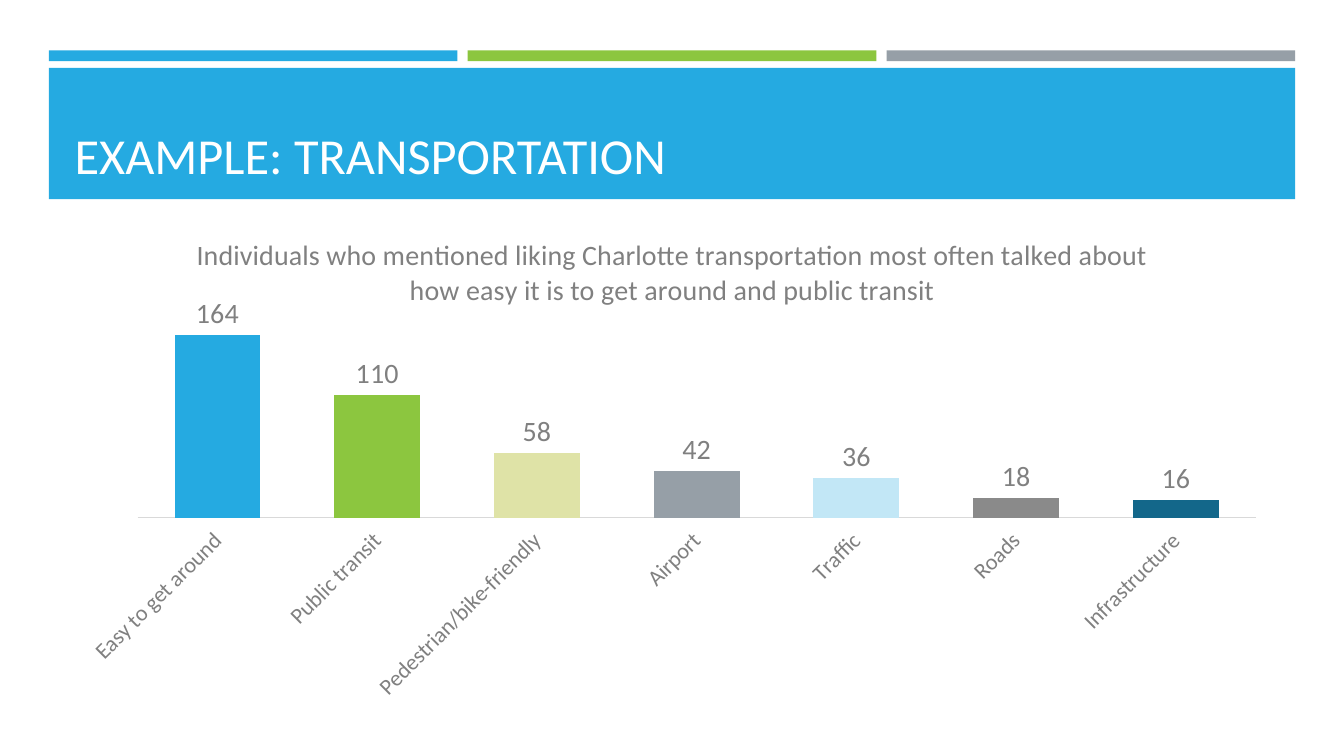
"""Build the transportation example slide: a title banner above a column chart."""
from lxml import etree
from pptx import Presentation
from pptx.chart.data import CategoryChartData
from pptx.dml.color import RGBColor
from pptx.enum.chart import XL_CHART_TYPE as ChartType, XL_LABEL_POSITION as LabelPosition
from pptx.enum.chart import XL_TICK_LABEL_POSITION as TickLabels, XL_TICK_MARK as TickMark
from pptx.enum.shapes import MSO_SHAPE as Shape
from pptx.enum.text import MSO_ANCHOR as Anchor
from pptx.oxml.ns import qn
from pptx.util import Cm, Pt

BLUE = RGBColor(0x25, 0xAA, 0xE1)
GREEN = RGBColor(0x8C, 0xC6, 0x3F)
STEEL = RGBColor(0x96, 0x9F, 0xA7)
CREAM = RGBColor(0xDF, 0xE3, 0xA7)
PALE_BLUE = RGBColor(0xC2, 0xE7, 0xF6)
GREY = RGBColor(0x8A, 0x8A, 0x8A)
TEAL = RGBColor(0x13, 0x67, 0x8A)
TEXT_GREY = RGBColor(0x80, 0x80, 0x80)
AXIS_GREY = RGBColor(0xD9, 0xD9, 0xD9)
WHITE = RGBColor(0xFF, 0xFF, 0xFF)
FONT = "Calibri"

TITLE = "EXAMPLE: TRANSPORTATION"
FINDING = ("Individuals who mentioned liking Charlotte transportation most often talked about "
           "how easy it is to get around and public transit")
MENTIONS = [
    ("Easy to get around", 164, BLUE),
    ("Public transit", 110, GREEN),
    ("Pedestrian/bike-friendly", 58, CREAM),
    ("Airport", 42, STEEL),
    ("Traffic", 36, PALE_BLUE),
    ("Roads", 18, GREY),
    ("Infrastructure", 16, TEAL),
]
STRIPES = [BLUE, GREEN, STEEL]
PLOT_AREA = {"x": 0.06, "y": 0.21, "w": 0.92, "h": 0.41}

LEFT, BANNER_WIDTH = 1.23, 31.41
STRIPE_GAP = 0.26
STRIPE_WIDTH = (BANNER_WIDTH - STRIPE_GAP * (len(STRIPES) - 1)) / len(STRIPES)
CONTENT_LEFT, CONTENT_WIDTH = 1.63, 30.63


def set_font(font, size, color):
    font.name, font.size, font.bold = FONT, Pt(size), False
    font.color.rgb = color


def add_text(slide, text, *, left, top, width, height, size, color, anchor):
    frame = slide.shapes.add_textbox(Cm(left), Cm(top), Cm(width), Cm(height)).text_frame
    frame.word_wrap = True
    frame.vertical_anchor = anchor
    run = frame.paragraphs[0].add_run()
    run.text = text
    set_font(run.font, size, color)


def add_band(slide, color, left, top, width, height):
    band = slide.shapes.add_shape(Shape.RECTANGLE, Cm(left), Cm(top), Cm(width), Cm(height))
    band.shadow.inherit = False
    band.fill.solid()
    band.fill.fore_color.rgb = color
    band.line.fill.background()


def place_plot(chart, area):
    plot_area = chart.plots[0]._element.getparent()
    for old in plot_area.findall(qn("c:layout")):
        plot_area.remove(old)
    layout = etree.Element(qn("c:layout"))
    manual = etree.SubElement(layout, qn("c:manualLayout"))
    settings = {"layoutTarget": "inner", "xMode": "edge", "yMode": "edge", **area}
    for tag, value in settings.items():
        etree.SubElement(manual, qn(f"c:{tag}")).set("val", str(value))
    plot_area.insert(0, layout)


def add_mentions_chart(slide):
    data = CategoryChartData()
    data.categories = [topic for topic, _, _ in MENTIONS]
    data.add_series("Series 1", [count for _, count, _ in MENTIONS])
    chart = slide.shapes.add_chart(ChartType.COLUMN_CLUSTERED, Cm(CONTENT_LEFT), Cm(5.41),
                                   Cm(CONTENT_WIDTH), Cm(12.32), data).chart
    set_font(chart.font, 10, TEXT_GREY)
    chart.has_legend = False

    finding = chart.chart_title.text_frame.paragraphs[0].add_run()
    finding.text = FINDING
    set_font(finding.font, 20, TEXT_GREY)
    chart.chart_title.include_in_layout = False

    topics = chart.category_axis
    topics.major_tick_mark = topics.minor_tick_mark = TickMark.NONE
    topics.tick_label_position = TickLabels.LOW
    topics.format.line.color.rgb = AXIS_GREY
    topics.format.line.width = Pt(0.75)
    set_font(topics.tick_labels.font, 16, TEXT_GREY)
    label_body = next(topics._element.iter(qn("a:bodyPr")))
    label_body.set("rot", "-2700000")

    counts = chart.value_axis
    counts.minimum_scale, counts.maximum_scale = 0, 180
    counts.has_major_gridlines = False
    counts.visible = False

    columns = chart.plots[0]
    columns.vary_by_categories = False
    columns.gap_width, columns.overlap = 86, -27
    columns.has_data_labels = True
    labels = columns.data_labels
    labels.show_value = True
    labels.position = LabelPosition.OUTSIDE_END
    set_font(labels.font, 20, TEXT_GREY)
    for index, (_, _, color) in enumerate(MENTIONS):
        fill = columns.series[0].points[index].format.fill
        fill.solid()
        fill.fore_color.rgb = color
    place_plot(chart, PLOT_AREA)


def main():
    deck = Presentation()
    deck.slide_width, deck.slide_height = Cm(33.87), Cm(19.05)
    slide = deck.slides.add_slide(deck.slide_layouts[6])
    for index, color in enumerate(STRIPES):
        add_band(slide, color, LEFT + index * (STRIPE_WIDTH + STRIPE_GAP), 1.27, STRIPE_WIDTH, 0.27)
    add_band(slide, BLUE, LEFT, 1.71, BANNER_WIDTH, 3.31)
    add_text(slide, TITLE, left=CONTENT_LEFT, top=1.96, width=CONTENT_WIDTH, height=2.82,
             size=36, color=WHITE, anchor=Anchor.BOTTOM)
    add_mentions_chart(slide)
    deck.save("out.pptx")


if __name__ == "__main__":
    main()
